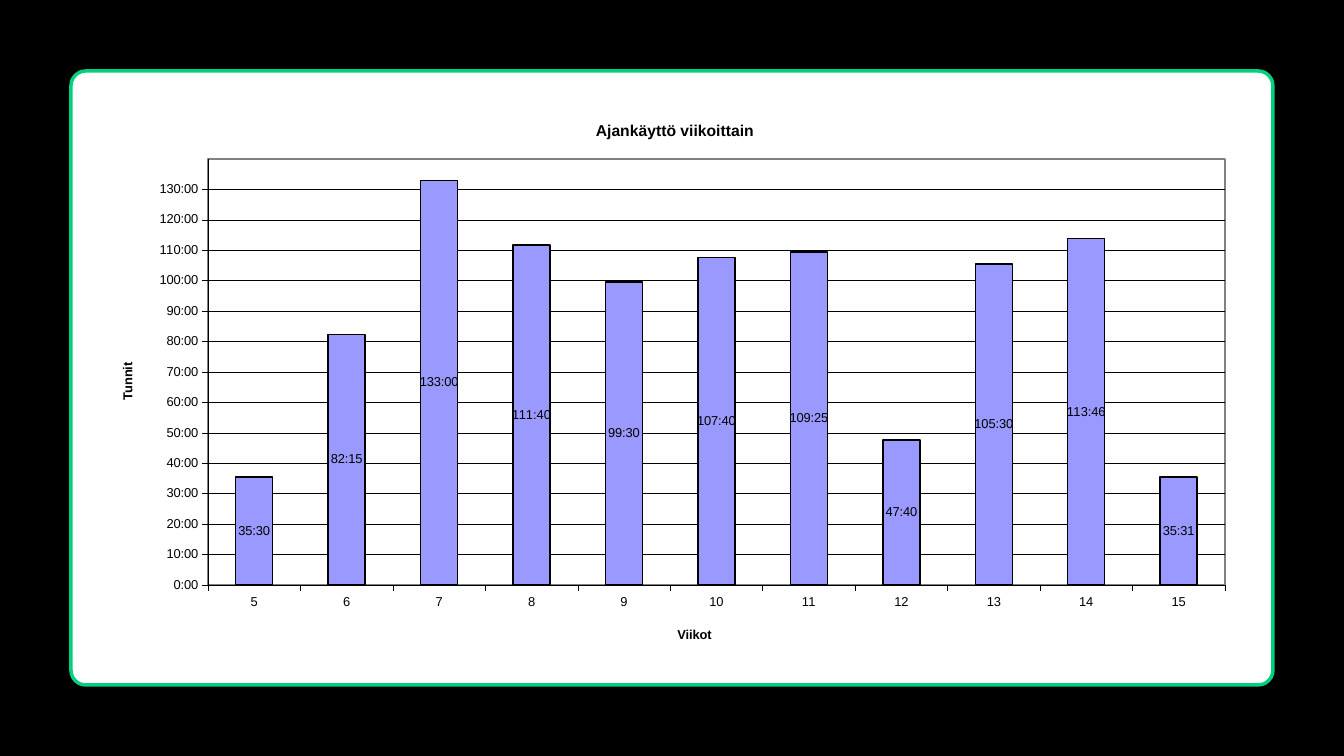
from lxml.etree import SubElement
from pptx import Presentation
from pptx.chart.data import CategoryChartData
from pptx.dml.color import RGBColor
from pptx.enum.chart import XL_CHART_TYPE as ChartType
from pptx.enum.chart import XL_LABEL_POSITION as LabelPosition
from pptx.enum.chart import XL_TICK_MARK as TickMark
from pptx.enum.shapes import MSO_SHAPE as Shape
from pptx.oxml import parse_xml
from pptx.oxml.ns import nsdecls, qn
from pptx.util import Pt

PX = 12192000 / 1344
HOURS = {5: "35:30", 6: "82:15", 7: "133:00", 8: "111:40", 9: "99:30", 10: "107:40",
         11: "109:25", 12: "47:40", 13: "105:30", 14: "113:46", 15: "35:31"}
HOUR_FORMAT = "[h]:mm"
SMALL = {"name": "Arial", "size": Pt(9.2), "bold": False}
AXIS_TITLE = {**SMALL, "bold": True}
HEADING = {**AXIS_TITLE, "size": Pt(11.2)}


def px(length):
    """Turn whole pixels into EMU."""
    return round(length * PX)


def colour(hex_value):
    """Turn a hex string into a colour."""
    return RGBColor.from_string(hex_value)


def days(clock):
    """Turn hours:minutes into a fraction of days."""
    hours, minutes = map(int, clock.split(":"))
    return round((hours + minutes / 60) / 24, 6)


def set_line(line, hex_value, width):
    """Give a line its colour and its width in points."""
    line.color.rgb = colour(hex_value)
    line.width = Pt(width)


def set_font(font, values):
    """Apply a dict of format values and black to a font."""
    for key, value in values.items():
        setattr(font, key, value)
    font.color.rgb = colour("000000")


def place(element, box, position, **fractions):
    """Fix a chart part at fractions of the chart box."""
    for old in element.findall(qn("c:layout")):
        element.remove(old)
    layout = parse_xml(f"<c:layout {nsdecls('c')}/>")
    element.insert(position, layout)
    manual = SubElement(layout, qn("c:manualLayout"))
    if "w" in fractions:
        SubElement(manual, qn("c:layoutTarget"), val="inner")
    for key in ("x", "y"):
        SubElement(manual, qn(f"c:{key}Mode"), val="edge")
    sides = {"x": box[2], "y": box[3], "w": box[2], "h": box[3]}
    for key, length in fractions.items():
        SubElement(manual, qn(f"c:{key}"), val=f"{length / sides[key]:.4f}")


def add_title(title, text, values, box, x, y):
    """Write a chart or axis title at a point in the chart box."""
    title.text_frame.text = text
    set_font(title.text_frame.paragraphs[0].runs[0].font, values)
    place(title.element, box, 1, x=x, y=y)


def style_axis(axis):
    """Give an axis its ticks, line and font."""
    axis.major_tick_mark = TickMark.OUTSIDE
    axis.minor_tick_mark = TickMark.NONE
    set_line(axis.format.line, "000000", 0.25)
    set_font(axis.tick_labels.font, SMALL)


def add_card(slide, box):
    """Draw the white rounded card."""
    card = slide.shapes.add_shape(Shape.ROUNDED_RECTANGLE, *map(px, box))
    card.adjustments[0] = 0.024
    card.shadow.inherit = False
    card.fill.solid()
    card.fill.fore_color.rgb = colour("FFFFFF")
    set_line(card.line, "01D17D", 2.5)


def add_hours_chart(slide, box):
    """Draw the column chart of hours per week."""
    data = CategoryChartData(number_format=HOUR_FORMAT)
    data.categories = [str(week) for week in HOURS]
    data.add_series("Series 1", [days(clock) for clock in HOURS.values()])
    chart = slide.shapes.add_chart(ChartType.COLUMN_STACKED, *map(px, box), data).chart
    set_font(chart.font, SMALL)
    chart.has_legend = False

    weeks, hours = chart.category_axis, chart.value_axis
    style_axis(weeks)
    style_axis(hours)
    hours.minimum_scale = 0
    hours.maximum_scale = days("140:00")
    hours.major_unit = days("10:00")
    hours.tick_labels.number_format = HOUR_FORMAT
    hours.tick_labels.number_format_is_linked = False
    set_line(hours.major_gridlines.format.line, "000000", 0.25)

    chart.has_title = True
    add_title(chart.chart_title, "Ajankäyttö viikoittain", HEADING, box, 497, 21)
    add_title(weeks.axis_title, "Viikot", AXIS_TITLE, box, 579, 528)
    add_title(hours.axis_title, "Tunnit", AXIS_TITLE, box, 21, 264)
    hours.axis_title.element.find(".//" + qn("a:bodyPr")).set("rot", "-5400000")

    plot = chart.plots[0]
    plot.gap_width, plot.overlap, plot.vary_by_categories = 150, 100, False
    columns = plot.series[0]
    columns.format.fill.solid()
    columns.format.fill.fore_color.rgb = colour("9999FF")
    set_line(columns.format.line, "000000", 1)
    labels = columns.data_labels
    labels.show_value = True
    labels.position = LabelPosition.CENTER
    labels.number_format = HOUR_FORMAT
    labels.number_format_is_linked = False
    set_font(labels.font, SMALL)

    area = chart.element.find(".//" + qn("c:plotArea"))
    place(area, box, 0, x=112, y=63, w=1017, h=426)
    area.append(parse_xml(
        f'<c:spPr {nsdecls("c", "a")}><a:noFill/><a:ln w="12700"><a:solidFill>'
        '<a:srgbClr val="808080"/></a:solidFill></a:ln></c:spPr>'))


def main():
    """Build and save the slide."""
    deck = Presentation()
    deck.slide_width, deck.slide_height = px(1344), px(756)
    slide = deck.slides.add_slide(deck.slide_layouts[6])
    slide.background.fill.solid()
    slide.background.fill.fore_color.rgb = colour("000000")
    add_card(slide, (71, 71, 1202, 614))
    add_hours_chart(slide, (96, 96, 1152, 563))
    deck.save("out.pptx")


if __name__ == "__main__":
    main()
